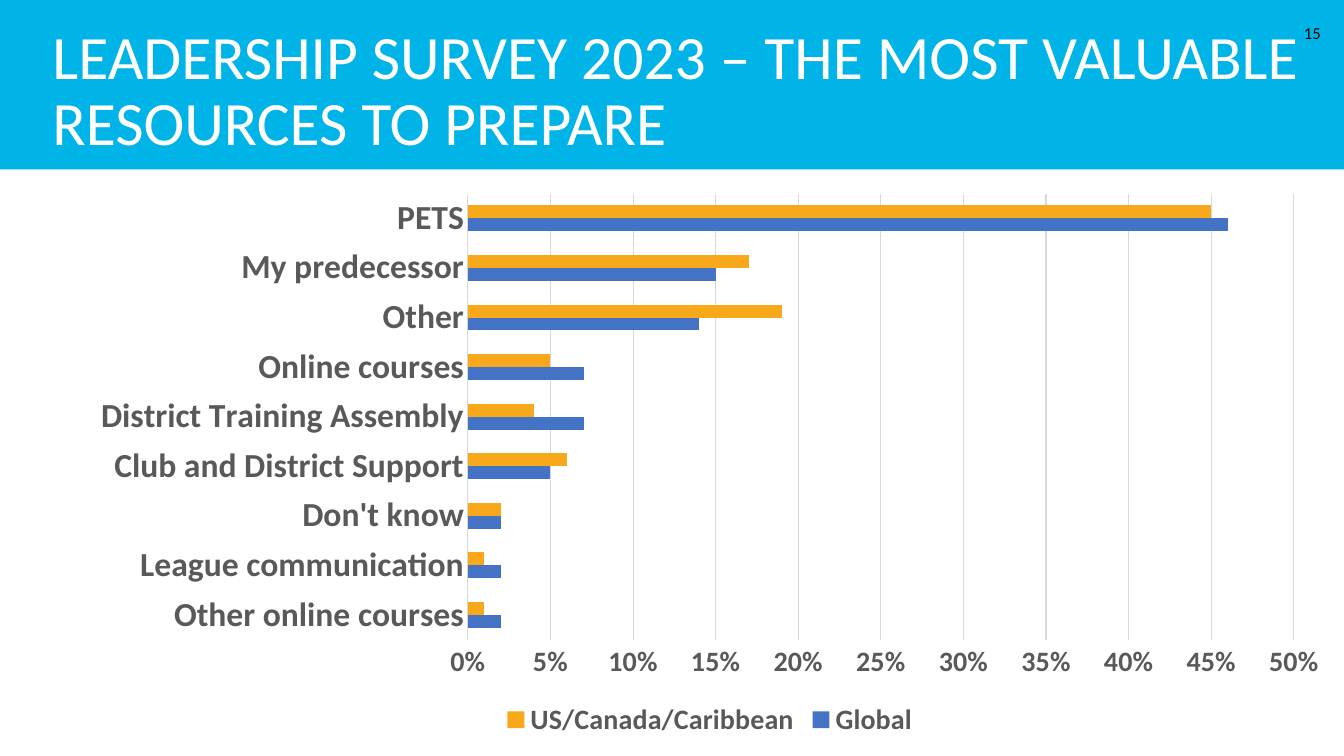
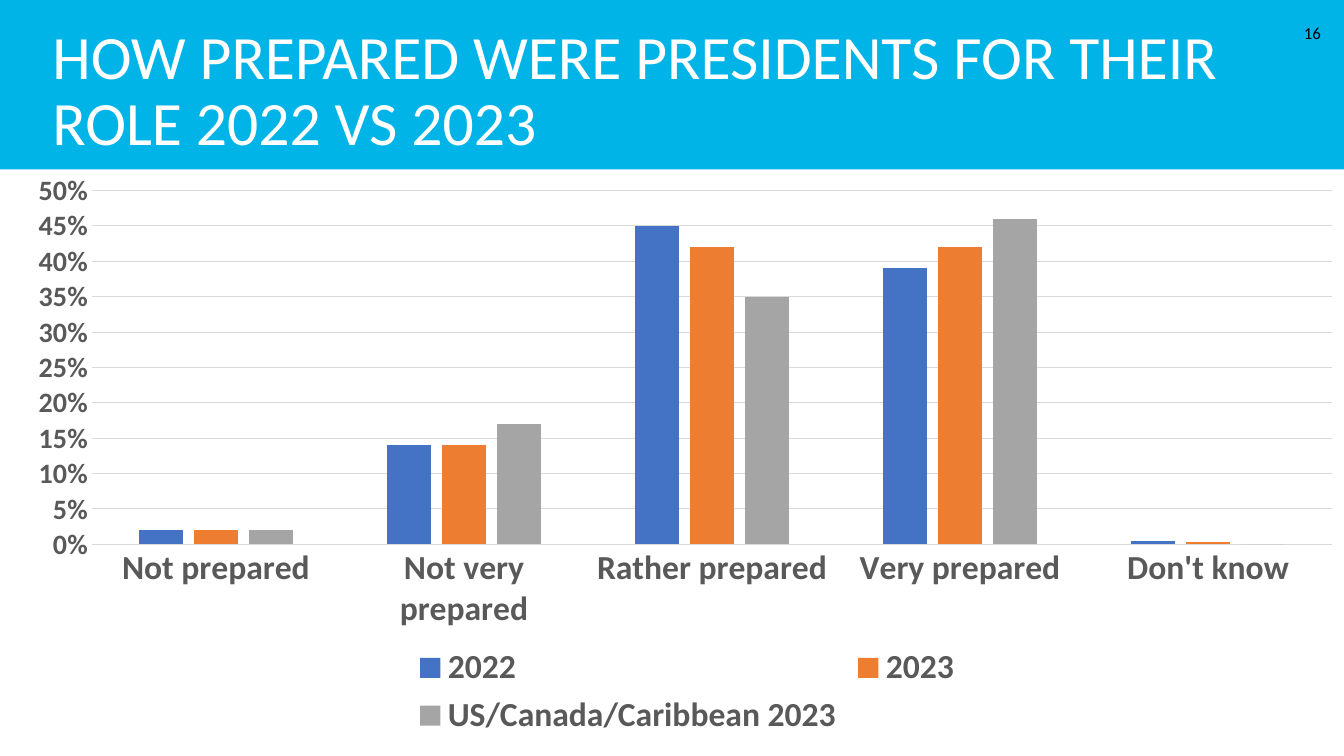
from dataclasses import dataclass

from lxml import etree
from pptx import Presentation
from pptx.chart.data import CategoryChartData
from pptx.dml.color import RGBColor
from pptx.enum.chart import XL_CHART_TYPE, XL_LEGEND_POSITION, XL_TICK_MARK
from pptx.enum.shapes import MSO_SHAPE
from pptx.enum.text import MSO_ANCHOR, MSO_AUTO_SIZE, PP_ALIGN
from pptx.oxml.ns import qn
from pptx.util import Inches, Pt

BAR = XL_CHART_TYPE.BAR_CLUSTERED
COLUMN = XL_CHART_TYPE.COLUMN_CLUSTERED
LEGEND_BOTTOM = XL_LEGEND_POSITION.BOTTOM
NO_TICK = XL_TICK_MARK.NONE
RECTANGLE = MSO_SHAPE.RECTANGLE
MIDDLE, BOTTOM = MSO_ANCHOR.MIDDLE, MSO_ANCHOR.BOTTOM
LEFT, RIGHT = PP_ALIGN.LEFT, PP_ALIGN.RIGHT
NO_AUTOFIT = MSO_AUTO_SIZE.NONE


@dataclass(frozen=True)
class Theme:
    font: str = "Calibri"
    band: str = "01B4E7"
    white: str = "FFFFFF"
    black: str = "000000"
    label: str = "595959"
    grid: str = "D9D9D9"
    blue: str = "4472C4"
    gold: str = "F7A81B"
    orange: str = "ED7D31"
    gray: str = "A5A5A5"
    title_size: int = 44
    category_size: int = 24
    value_size: int = 20
    number_size: int = 12
    grid_width: float = 0.75


THEME = Theme()
SLIDE_WIDTH, SLIDE_HEIGHT = 13.33, 7.5
BAND_HEIGHT = 1.68
TITLE_BOX = (0.42, 0, 12.58, BAND_HEIGHT)
NUMBER_BOX = (12.74, 0.13, 0.46, 0.4)
FIRST_NUMBER = 15
TITLE_ONLY = 5


def color(code):
    return RGBColor.from_string(code)


def box(lengths):
    return [Inches(length) for length in lengths]


def style_font(font, size, code, bold=False):
    font.name = THEME.font
    font.size = Pt(size)
    font.bold = bold
    font.color.rgb = color(code)


def write_text(shape, text, *, size, code, align=LEFT, anchor=MIDDLE, line_spacing=1.0):
    frame = shape.text_frame
    frame.word_wrap = True
    frame.auto_size = NO_AUTOFIT
    frame.vertical_anchor = anchor
    paragraph = frame.paragraphs[0]
    paragraph.alignment = align
    paragraph.line_spacing = line_spacing
    run = paragraph.add_run()
    run.text = text
    style_font(run.font, size, code)
    return frame


def add_band(slide):
    band = slide.shapes.add_shape(RECTANGLE, *box((0, 0, SLIDE_WIDTH, BAND_HEIGHT)))
    band.shadow.inherit = False
    band.fill.solid()
    band.fill.fore_color.rgb = color(THEME.band)
    band.line.fill.background()
    slide.shapes.element.remove(band.element)
    slide.slide_layout.shapes.element.insert(2, band.element)


def add_title(slide, text):
    title = slide.shapes.title
    title.left, title.top, title.width, title.height = box(TITLE_BOX)
    frame = write_text(title, text, size=THEME.title_size, code=THEME.white,
                       anchor=BOTTOM, line_spacing=0.9)
    frame.margin_left, frame.margin_top, frame.margin_right, frame.margin_bottom = box(
        (0.1, 0, 0.1, 0.1))


def add_number(slide, number):
    shape = slide.shapes.add_textbox(*box(NUMBER_BOX))
    write_text(shape, str(number), size=THEME.number_size, code=THEME.black, align=RIGHT)


def style_grid_line(line):
    line.color.rgb = color(THEME.grid)
    line.width = Pt(THEME.grid_width)


def style_axes(chart):
    category_axis, value_axis = chart.category_axis, chart.value_axis
    for axis, size in ((category_axis, THEME.category_size), (value_axis, THEME.value_size)):
        axis.major_tick_mark = axis.minor_tick_mark = NO_TICK
        style_font(axis.tick_labels.font, size, THEME.label, bold=True)
    category_axis.has_major_gridlines = False
    style_grid_line(category_axis.format.line)
    value_axis.format.line.fill.background()
    value_axis.has_major_gridlines = True
    style_grid_line(value_axis.major_gridlines.format.line)
    value_axis.minimum_scale = 0
    value_axis.maximum_scale = 0.5
    value_axis.major_unit = 0.05
    value_axis.tick_labels.number_format = "0%"
    value_axis.tick_labels.number_format_is_linked = False


def place_plot(chart, area):
    plot_area = chart.element.find(".//" + qn("c:plotArea"))
    for layout in plot_area.findall(qn("c:layout")):
        plot_area.remove(layout)
    layout = etree.Element(qn("c:layout"))
    manual = etree.SubElement(layout, qn("c:manualLayout"))
    settings = [("layoutTarget", "inner"), ("xMode", "edge"), ("yMode", "edge")]
    settings += zip("xywh", area)
    for name, value in settings:
        etree.SubElement(manual, qn("c:" + name)).set("val", str(value))
    plot_area.insert(0, layout)


def add_bar_chart(slide, kind, place, categories, series, *, gap, overlap=0,
                  legend_size, plot_box=None):
    data = CategoryChartData(number_format="0%")
    data.categories = categories
    for name, values, _ in series:
        data.add_series(name, values)
    chart = slide.shapes.add_chart(kind, *box(place), data).chart
    chart.has_title = False
    style_font(chart.font, 10, THEME.black)
    style_axes(chart)
    plot = chart.plots[0]
    plot.vary_by_categories = False
    plot.gap_width = gap
    plot.overlap = overlap
    for bars, (_, _, code) in zip(plot.series, series):
        bars.format.fill.solid()
        bars.format.fill.fore_color.rgb = color(code)
    chart.has_legend = True
    chart.legend.position = LEGEND_BOTTOM
    chart.legend.include_in_layout = False
    style_font(chart.legend.font, legend_size, THEME.label, bold=True)
    if plot_box:
        place_plot(chart, plot_box)


def add_resources_chart(slide):
    categories = ["Other online courses", "League communication", "Don't know",
                  "Club and District Support", "District Training Assembly",
                  "Online courses", "Other", "My predecessor", "PETS"]
    series = [
        ("Global", (0.02, 0.02, 0.02, 0.05, 0.07, 0.07, 0.14, 0.15, 0.46), THEME.blue),
        ("US/Canada/Caribbean",
         (0.01, 0.01, 0.02, 0.06, 0.04, 0.05, 0.19, 0.17, 0.45), THEME.gold),
    ]
    add_bar_chart(slide, BAR, (0.75, 1.81, 12.58, 5.56), categories, series,
                  gap=182, legend_size=THEME.value_size)


def add_prepared_chart(slide):
    categories = ["Not prepared", "Not very prepared", "Rather prepared",
                  "Very prepared", "Don't know"]
    series = [
        ("2022", (0.02, 0.14, 0.45, 0.39, 0.005), THEME.blue),
        ("2023", (0.02, 0.14, 0.42, 0.42, 0.004), THEME.orange),
        ("US/Canada/Caribbean 2023", (0.02, 0.17, 0.35, 0.46, 0), THEME.gray),
    ]
    add_bar_chart(slide, COLUMN, (0.3, BAND_HEIGHT, 13.03, 5.69), categories, series,
                  gap=219, overlap=-27, legend_size=THEME.category_size,
                  plot_box=(0.047, 0.037, 0.944, 0.617))


def main():
    presentation = Presentation()
    presentation.slide_width = Inches(SLIDE_WIDTH)
    presentation.slide_height = Inches(SLIDE_HEIGHT)
    layout = presentation.slide_layouts[TITLE_ONLY]
    contents = [
        ("LEADERSHIP SURVEY 2023 – THE MOST VALUABLE RESOURCES TO PREPARE",
         add_resources_chart),
        ("HOW PREPARED WERE PRESIDENTS FOR THEIR ROLE 2022 VS 2023", add_prepared_chart),
    ]
    for number, (title, add_content) in enumerate(contents, FIRST_NUMBER):
        slide = presentation.slides.add_slide(layout)
        if number == FIRST_NUMBER:
            add_band(slide)
        add_title(slide, title)
        add_number(slide, number)
        add_content(slide)
    presentation.save("out.pptx")


if __name__ == "__main__":
    main()
